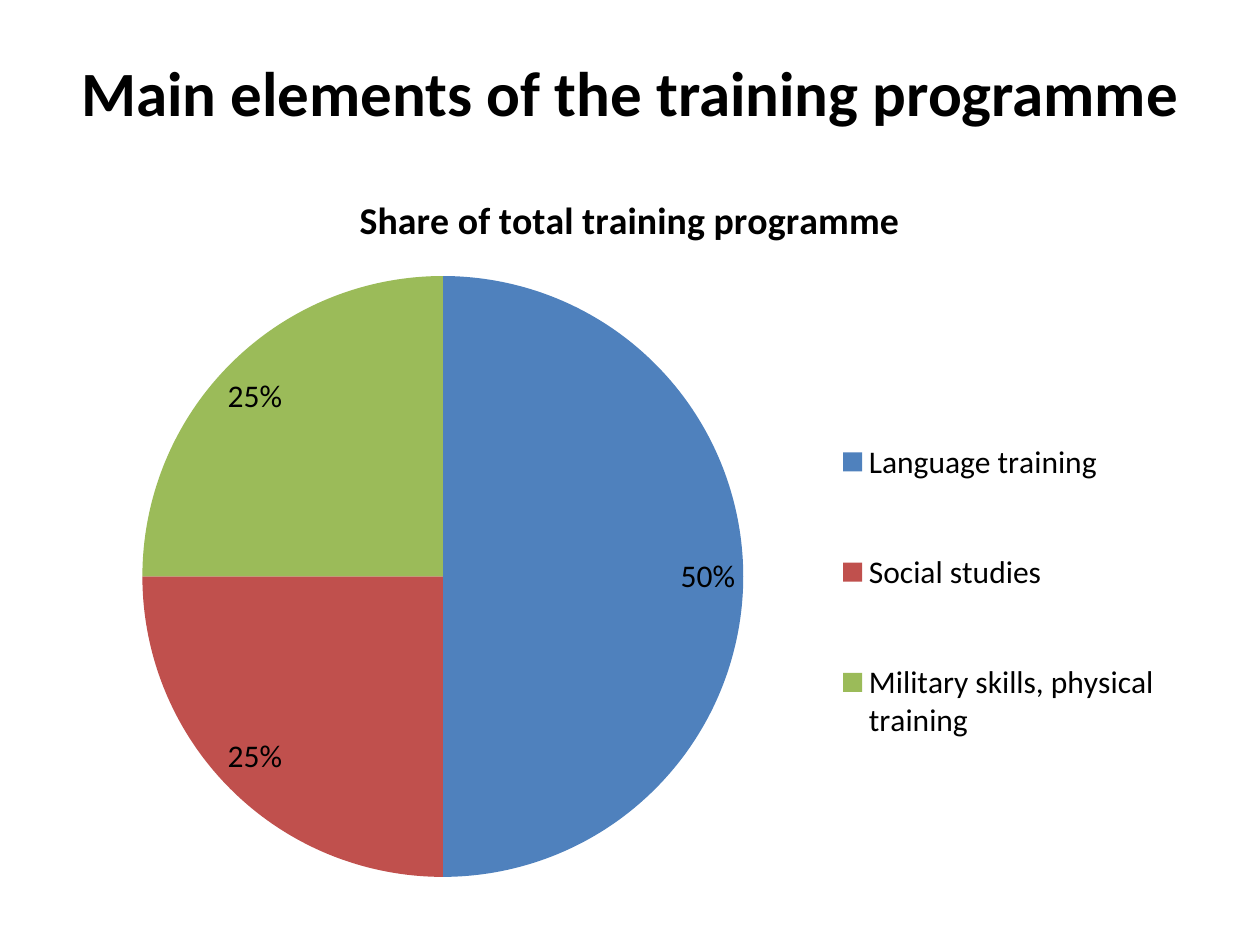
from lxml import etree
from pptx import Presentation
from pptx import util as u
from pptx.chart.data import CategoryChartData
from pptx.dml.color import RGBColor
from pptx.enum import chart as ch, text
from pptx.oxml.ns import qn

BLACK = RGBColor(0x00, 0x00, 0x00)
BLUE = RGBColor(0x4F, 0x81, 0xBD)
RED = RGBColor(0xC0, 0x50, 0x4D)
GREEN = RGBColor(0x9B, 0xBB, 0x59)
SHARES = [
    ("Language training", 0.5, BLUE),
    ("Social studies", 0.25, RED),
    ("Military skills, physical training", 0.25, GREEN),
]


def style(font, size, bold=False, color=BLACK, name="Calibri"):
    """Apply a text format to a font."""
    font.size, font.bold, font.name = u.Pt(size), bold, name
    font.color.rgb = color


def write(tf, s, align=text.PP_ALIGN.CENTER, **fmt):
    """Write one formatted paragraph into a text frame."""
    p = tf.paragraphs[0]
    p.alignment = align
    r = p.add_run()
    r.text = s
    style(r.font, **fmt)


def layout(x, y, w, h, inner=False):
    """Return a manual chart layout in fractions of the chart area."""
    lay = etree.Element(qn("c:layout"))
    manual = etree.SubElement(lay, qn("c:manualLayout"))
    parts = [("layoutTarget", "inner")] if inner else []
    parts += [("xMode", "edge"), ("yMode", "edge")]
    parts += [("x", x), ("y", y), ("w", w), ("h", h)]
    for tag, val in parts:
        etree.SubElement(manual, qn("c:" + tag)).set("val", str(val))
    return lay


class Deck:
    """Holds the scale, the presentation and the current slide."""

    PX = u.Inches(1) // 126

    def __init__(self, w, h):
        self.prs = Presentation()
        self.prs.slide_width, self.prs.slide_height = self.box(w, h)
        self.slide = self.prs.slides.add_slide(self.prs.slide_layouts[5])

    def box(self, *px):
        return [u.Emu(v * self.PX) for v in px]

    def title(self, s, x, y, w, h):
        sp = self.slide.shapes.title
        sp.left, sp.top, sp.width, sp.height = self.box(x, y, w, h)
        tf = sp.text_frame
        tf.word_wrap = True
        tf.vertical_anchor = text.MSO_ANCHOR.MIDDLE
        write(tf, s, size=36, bold=True)

    def pie(self, name, shares, x, y, w, h):
        data = CategoryChartData(number_format="0%")
        data.categories = [label for label, _, _ in shares]
        data.add_series(name, [share for _, share, _ in shares])
        chart = self.slide.shapes.add_chart(
            ch.XL_CHART_TYPE.PIE, *self.box(x, y, w, h), data).chart
        style(chart.font, 18)
        chart.has_title = True
        write(chart.chart_title.text_frame, name, size=21.6, bold=True)
        chart.chart_title.include_in_layout = False

        plot = chart.plots[0]
        plot.vary_by_categories = True
        for i, (_, _, color) in enumerate(shares):
            fill = plot.series[0].points[i].format.fill
            fill.solid()
            fill.fore_color.rgb = color
        plot.has_data_labels = True
        labels = plot.data_labels
        labels.show_percentage, labels.show_value = True, False
        labels.number_format, labels.number_format_is_linked = "0%", False
        style(labels.font, 18)

        chart.has_legend = True
        legend = chart.legend
        legend.position = ch.XL_LEGEND_POSITION.RIGHT
        legend.include_in_layout = False
        style(legend.font, 18)
        self.place(chart)

    def place(self, chart):
        area = chart.element.find(".//" + qn("c:plotArea"))
        for old in area.findall(qn("c:layout")):
            area.remove(old)
        area.insert(0, layout(0.07, 0.15, 0.53, 0.82, inner=True))
        pos = chart.element.find(".//" + qn("c:legendPos"))
        for old in pos.getparent().findall(qn("c:layout")):
            pos.getparent().remove(old)
        pos.addnext(layout(0.67, 0.28, 0.31, 0.6))


def main():
    deck = Deck(1260, 945)
    deck.title("Main elements of the training programme", 63, 38, 1134, 107)
    deck.pie("Share of total training programme", SHARES, 63, 165, 1134, 735)
    deck.prs.save("out.pptx")


if __name__ == "__main__":
    main()
